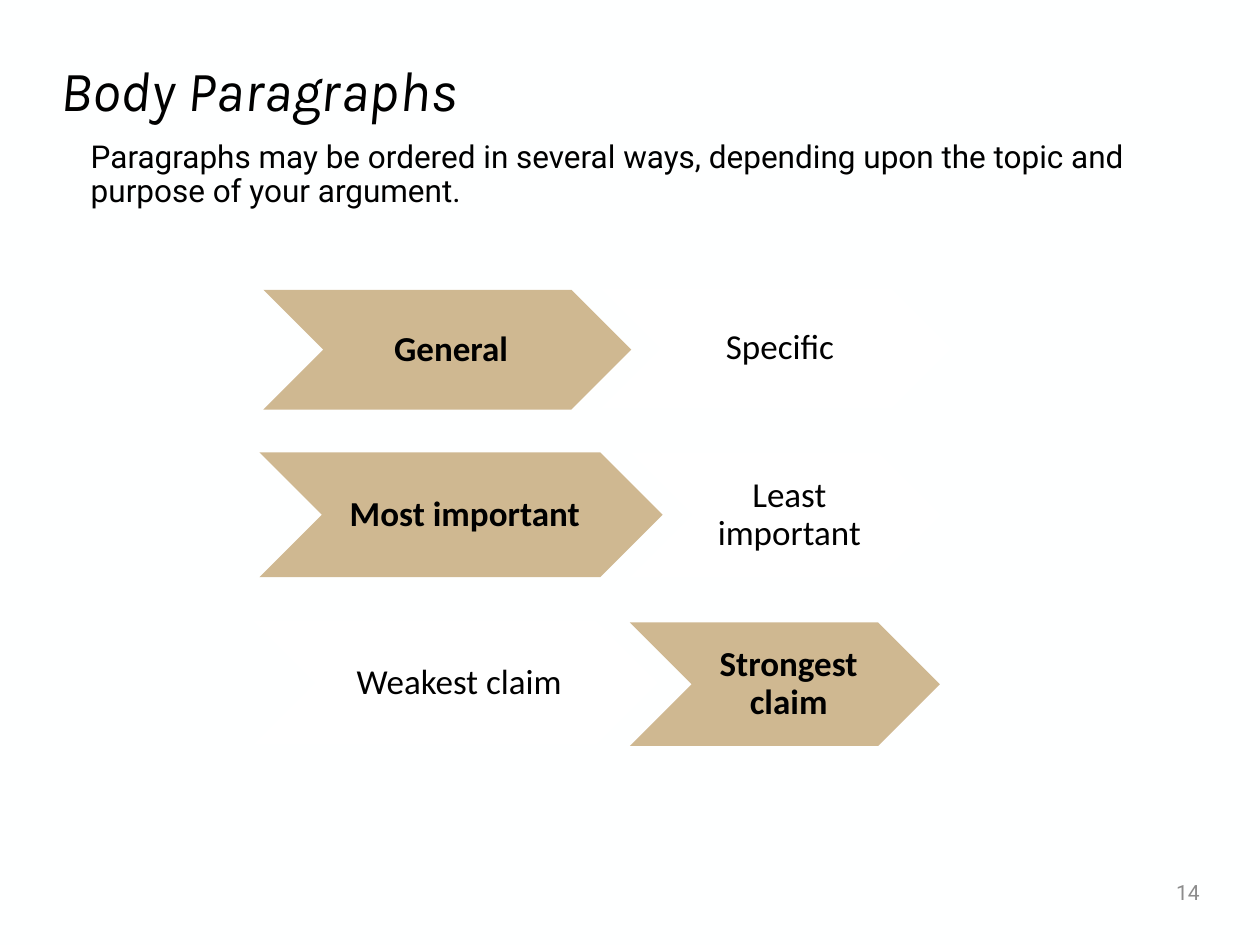
from dataclasses import dataclass

from lxml.etree import SubElement
from pptx import Presentation
from pptx.dml.color import RGBColor
from pptx.enum.shapes import MSO_SHAPE as Shape
from pptx.enum.text import MSO_ANCHOR as Anchor, MSO_AUTO_SIZE as AutoSize, PP_ALIGN as Align
from pptx.oxml.ns import qn
from pptx.util import Inches, Pt

COLORS = {"background": "FEFFFF", "gold": "CFB891", "white": "FFFFFF",
          "text": "000000", "number": "8C8C8C"}
CHEVRON_INSETS = {"margin_left": 0.09, "margin_top": 0.03,
                  "margin_right": 0.03, "margin_bottom": 0.03}


@dataclass
class Chevron:
    text: str
    left: float
    top: float
    width: float
    height: float
    strong: bool = False


CHEVRONS = [
    Chevron("General", 2.09, 2.3, 2.92, 0.95, strong=True),
    Chevron("Specific", 4.77, 2.29, 2.78, 0.95),
    Chevron("Most important", 2.06, 3.59, 3.2, 0.99, strong=True),
    Chevron("Least important", 5, 3.59, 2.47, 0.99),
    Chevron("Weakest claim", 2.01, 4.93, 3.21, 0.98),
    Chevron("Strongest claim", 5, 4.94, 2.46, 0.98, strong=True),
]


def rgb(name: str) -> RGBColor:
    return RGBColor.from_string(COLORS[name])


def place(sp, left: float, top: float, width: float, height: float) -> None:
    sp.left, sp.top = Inches(left), Inches(top)
    sp.width, sp.height = Inches(width), Inches(height)


def write(sp, text: str, font: str, size: float, color: str = "text",
          align: Align = Align.LEFT, anchor: Anchor = Anchor.MIDDLE,
          spacing: float = 0.9, **styles: bool):
    """Fill a shape with one formatted paragraph and return the paragraph."""
    tf = sp.text_frame
    tf.word_wrap = True
    tf.auto_size = AutoSize.NONE
    tf.vertical_anchor = anchor
    p = tf.paragraphs[0]
    p.alignment, p.line_spacing, p.space_before = align, spacing, Pt(0)
    r = p.add_run()
    r.text = text
    for name, value in {"name": font, "size": Pt(size), **styles}.items():
        setattr(r.font, name, value)
    r.font.color.rgb = rgb(color)
    return p


def remove_bullet(p) -> None:
    pPr = p._p.get_or_add_pPr()
    pPr.set("marL", "0")
    pPr.set("indent", "0")
    SubElement(pPr, qn("a:buNone"))


def draw_chevron(s, item: Chevron) -> None:
    sp = s.shapes.add_shape(Shape.CHEVRON, Inches(item.left), Inches(item.top),
                            Inches(item.width), Inches(item.height))
    sp.shadow.inherit = False
    sp.fill.solid()
    sp.fill.fore_color.rgb = rgb("gold" if item.strong else "white")
    sp.line.fill.background()
    for side, inset in CHEVRON_INSETS.items():
        setattr(sp.text_frame, side, Inches(inset))
    write(sp, item.text, "Calibri", 20, align=Align.CENTER, bold=item.strong)


def main() -> None:
    prs = Presentation()
    prs.slide_width, prs.slide_height = Inches(10), Inches(7.5)
    s = prs.slides.add_slide(prs.slide_layouts[1])
    s.background.fill.solid()
    s.background.fill.fore_color.rgb = rgb("background")

    title, body = s.shapes.title, s.placeholders[1]
    place(title, 0.38, 0.42, 9.24, 0.64)
    write(title, "Body Paragraphs", "Karla", 32.4, italic=True)
    place(body, 0.62, 1.07, 8.45, 4.87)
    p = write(body, "Paragraphs may be ordered in several ways, depending upon "
              "the topic and purpose of your argument.", "Roboto", 18, anchor=Anchor.TOP)
    remove_bullet(p)

    number = s.shapes.add_textbox(Inches(8.42), Inches(6.88), Inches(1.2), Inches(0.4))
    write(number, "14", "Roboto", 12, "number", Align.RIGHT, spacing=1.0)

    for item in CHEVRONS:
        draw_chevron(s, item)
    prs.save("out.pptx")


if __name__ == "__main__":
    main()
